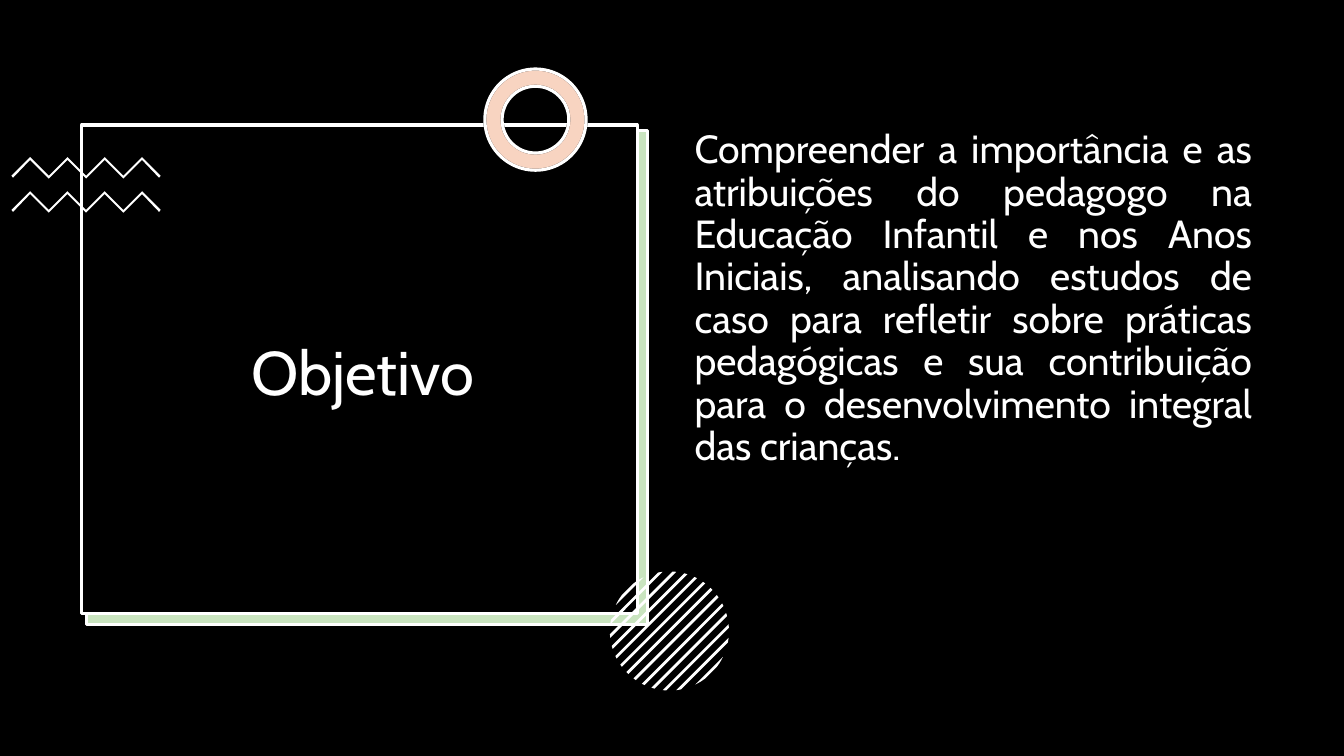
from math import sqrt

from lxml.etree import SubElement
from pptx import Presentation
from pptx.dml.color import RGBColor
from pptx.enum.shapes import MSO_SHAPE
from pptx.enum.text import MSO_ANCHOR, MSO_AUTO_SIZE, PP_ALIGN
from pptx.oxml.ns import qn
from pptx.util import Cm, Pt

THEME = {
    "black": RGBColor(0x00, 0x00, 0x00),
    "white": RGBColor(0xFF, 0xFF, 0xFF),
    "green": RGBColor(0x4E, 0xA7, 0x2E),
    "orange": RGBColor(0xE9, 0x71, 0x32),
    "font": "Cabin",
    "title_size": Pt(44),
    "body_size": Pt(28),
    "outline": Pt(2.25),
    "tint": 30000,
}


def paint(shape, fill, line=None, tinted=False):
    shape.shadow.inherit = False
    shape.fill.solid()
    shape.fill.fore_color.rgb = THEME[fill]
    if tinted:
        color = shape.fill._xPr.find(qn("a:solidFill"))[0]
        SubElement(color, qn("a:alpha"), val=str(THEME["tint"]))
    if line:
        shape.line.color.rgb = THEME[line]
        shape.line.width = THEME["outline"]
    else:
        shape.line.fill.background()


def draw_outline(shapes, points):
    start, *others = [(Cm(x), Cm(y)) for x, y in points]
    builder = shapes.build_freeform(*start)
    builder.add_line_segments(others, close=True)
    paint(builder.convert_to_shape(), "white")


presentation = Presentation()
presentation.slide_width = Cm(33.87)
presentation.slide_height = Cm(19.05)
slide = presentation.slides.add_slide(presentation.slide_layouts[1])
shapes = slide.shapes

panels = [
    ((0, 0, 33.87, 19.05), "black", None, False),
    ((2.16, 3.3, 14.15, 12.45), "white", None, False),
    ((2.18, 3.28, 14.15, 12.45), "green", "white", True),
    ((2.06, 3.15, 14, 12.32), "black", "white", False),
]
for box, fill, line, tinted in panels:
    panel = shapes.add_shape(MSO_SHAPE.RECTANGLE, *map(Cm, box))
    paint(panel, fill, line, tinted)

zigzag_left, zigzag_step, zigzag_height, stroke = 0.29, 0.47, 0.47, 0.07
for top in (3.96, 4.82):
    upper = [
        (zigzag_left + zigzag_step * i, top + (0 if i % 2 else zigzag_height))
        for i in range(9)
    ]
    lower = [(x, y + stroke) for x, y in reversed(upper)]
    lower[0] = (lower[0][0] - 0.04, lower[0][1] - 0.02)
    lower[-1] = (lower[-1][0] + 0.04, lower[-1][1] - 0.02)
    draw_outline(shapes, upper + lower)

for fill, line, tinted in (("white", "black", False), ("orange", "white", True)):
    ring = shapes.add_shape(MSO_SHAPE.DONUT, Cm(12.22), Cm(1.74), Cm(2.55), Cm(2.55))
    ring.adjustments[0] = 0.17
    paint(ring, fill, line, tinted)

center_x, center_y, radius = 16.87, 15.9, 1.5
stripe_pitch, stripe_width, arc_steps = 0.242, 0.07, 6
for stripe in range(-6, 7):
    near_edge = stripe * stripe_pitch - stripe_width / 2
    arc = []
    for step in range(arc_steps + 1):
        offset = near_edge + stripe_width * step / arc_steps
        offset = max(-radius, min(radius, offset))
        arc.append((offset, sqrt(radius**2 - offset**2)))
    edge = arc + [(offset, -reach) for offset, reach in reversed(arc)]
    draw_outline(shapes, [
        (center_x + (offset + reach) / sqrt(2), center_y + (offset - reach) / sqrt(2))
        for offset, reach in edge
    ])

texts = [
    (
        shapes.title,
        "Objetivo",
        (2.34, 3.86, 13.61, 11.23),
        {"vertical_anchor": MSO_ANCHOR.MIDDLE},
        {"alignment": PP_ALIGN.CENTER, "line_spacing": 0.9},
        THEME["title_size"],
    ),
    (
        slide.placeholders[1],
        "Compreender a importância e as atribuições do pedagogo na Educação Infantil "
        "e nos Anos Iniciais, analisando estudos de caso para refletir sobre práticas "
        "pedagógicas e sua contribuição para o desenvolvimento integral das crianças.",
        (17.25, 3.15, 14.55, 12.09),
        {"vertical_anchor": MSO_ANCHOR.TOP},
        {"alignment": PP_ALIGN.JUSTIFY, "line_spacing": 0.9, "space_before": Pt(10)},
        THEME["body_size"],
    ),
]
for placeholder, text, box, frame_format, paragraph_format, size in texts:
    shapes.element.append(placeholder.element)
    frame = placeholder.text_frame
    frame.text = text
    paragraph = frame.paragraphs[0]
    font = paragraph.runs[0].font
    position = dict(zip(("left", "top", "width", "height"), map(Cm, box)))
    frame_format = {"word_wrap": True, "auto_size": MSO_AUTO_SIZE.NONE, **frame_format}
    font_format = {"name": THEME["font"], "size": size}
    for target, values in (
        (placeholder, position),
        (frame, frame_format),
        (paragraph, paragraph_format),
        (font, font_format),
    ):
        for name, value in values.items():
            setattr(target, name, value)
    font.color.rgb = THEME["white"]
    properties = paragraph._p.get_or_add_pPr()
    properties.set("marL", "0")
    properties.set("indent", "0")
    SubElement(properties, qn("a:buNone"))

presentation.save("out.pptx")
